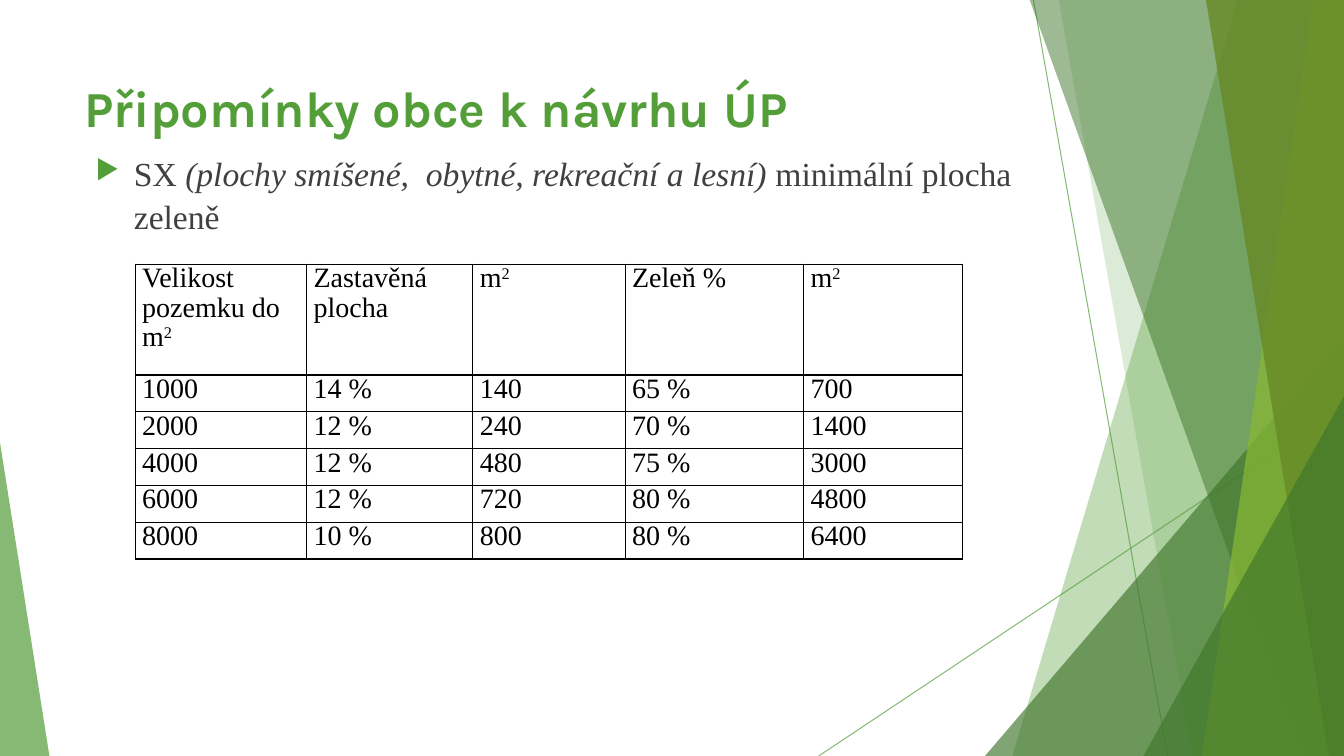
from dataclasses import dataclass

from lxml.etree import SubElement
from pptx import Presentation
from pptx.dml.color import RGBColor
from pptx.enum.shapes import MSO_CONNECTOR, MSO_SHAPE
from pptx.enum.text import MSO_ANCHOR
from pptx.oxml import parse_xml
from pptx.oxml.ns import nsdecls, qn
from pptx.util import Inches, Pt


@dataclass(frozen=True)
class Theme:
    green: str = "549E39"
    dark: str = "3F762B"
    lime: str = "8AB833"
    olive: str = "678A26"
    body: str = "404040"
    black: str = "000000"
    title_font: str = "Karla"
    text_font: str = "Times New Roman"
    title_size: int = 36
    body_size: int = 24
    table_size: int = 20


T = Theme()
WIDTH, HEIGHT = 13.33, 7.5


def set_alpha(s, percent):
    """Make every solid colour of the shape see-through."""
    for clr in s._element.spPr.iter(qn("a:srgbClr")):
        SubElement(clr, qn("a:alpha")).set("val", str(percent * 1000))


def paint(s, color, alpha):
    s.shadow.inherit = False
    s.fill.solid()
    s.fill.fore_color.rgb = RGBColor.from_string(color)
    s.line.fill.background()
    set_alpha(s, alpha)


def add_run(p, text, font, size, color, bold=False, italic=False, raised=False):
    r = p.add_run()
    r.text = text
    f = r.font
    f.name, f.size, f.bold, f.italic = font, Pt(size), bold, italic
    f.color.rgb = RGBColor.from_string(color)
    if raised:
        f._element.set("baseline", "30000")


def add_ray(slide, start, end):
    s = slide.shapes.add_connector(
        MSO_CONNECTOR.STRAIGHT, *(Inches(v) for v in (*start, *end)))
    s.line.width = Pt(0.75)
    s.line.color.rgb = RGBColor.from_string(T.green)
    SubElement(s._element.spPr, qn("a:effectLst"))
    set_alpha(s, 70)


def add_blade(slide, top_x, bottom_x, color, alpha):
    """Fill from a slanted left edge to the right side of the slide."""
    top = -0.01
    corners = [(top_x, top), (WIDTH, top), (WIDTH, HEIGHT), (bottom_x, HEIGHT)]
    points = [(Inches(x), Inches(y)) for x, y in corners]
    builder = slide.shapes.build_freeform(*points[0])
    builder.add_line_segments(points[1:], close=True)
    paint(builder.convert_to_shape(), color, alpha)


def add_wedge(slide, left, top, width, peak, color, alpha):
    """Triangle standing on the bottom edge, with its peak at 0 or 1."""
    s = slide.shapes.add_shape(
        MSO_SHAPE.ISOSCELES_TRIANGLE,
        *(Inches(v) for v in (left, top, width, HEIGHT - top)))
    s.adjustments[0] = peak
    paint(s, color, alpha)


def add_facets(slide):
    # Thin rays
    add_ray(slide, (10.25, 0), (11.58, HEIGHT))
    add_ray(slide, (WIDTH, 4.03), (8.12, HEIGHT))
    # Right-hand blades and wedges, back to front
    add_blade(slide, 12.28, 10.04, T.green, 36)
    add_blade(slide, 10.5, 11.83, T.green, 20)
    add_wedge(slide, 9.77, 3.33, 3.56, 1, T.dark, 66)
    add_blade(slide, 10.21, 12.91, T.dark, 50)
    add_blade(slide, 13.03, 11.92, T.lime, 70)
    add_blade(slide, 11.96, 13.18, T.olive, 80)
    add_wedge(slide, 11.34, 3.93, 1.99, 1, T.dark, 66)
    # Left corner
    add_wedge(slide, 0, 4.39, 0.49, 0, T.green, 70)


def add_text_box(slide, box):
    tf = slide.shapes.add_textbox(*(Inches(v) for v in box)).text_frame
    tf.word_wrap = True
    tf.vertical_anchor = MSO_ANCHOR.TOP
    p = tf.paragraphs[0]
    p.line_spacing = 1.07
    return p


def add_title(slide, box):
    p = add_text_box(slide, box)
    add_run(p, "Připomínky obce k návrhu ÚP", T.title_font, T.title_size,
            T.green, bold=True)


def add_body(slide, box):
    p = add_text_box(slide, box)
    p.space_before = Pt(10)
    # Green arrow bullet with a hanging indent
    pPr = p._p.get_or_add_pPr()
    pPr.set("marL", str(Inches(0.38)))
    pPr.set("indent", str(-Inches(0.38)))
    color = SubElement(pPr, qn("a:buClr"))
    SubElement(color, qn("a:srgbClr")).set("val", T.green)
    SubElement(pPr, qn("a:buSzPct")).set("val", "80000")
    SubElement(pPr, qn("a:buChar")).set("char", "▶")
    for text, italic in (("SX ", False),
                         ("(plochy smíšené,  obytné, rekreační a lesní) ", True),
                         ("minimální plocha zeleně", False)):
        add_run(p, text, T.text_font, T.body_size, T.body, italic=italic)


def add_borders(cell):
    tcPr = cell._tc.get_or_add_tcPr()
    for i, side in enumerate(("lnL", "lnR", "lnT", "lnB")):
        tcPr.insert(i, parse_xml(
            f'<a:{side} {nsdecls("a")} w="{Pt(1)}"><a:solidFill>'
            f'<a:srgbClr val="{T.black}"/></a:solidFill></a:{side}>'))


def fill_cell(cell, text):
    cell.fill.background()
    add_borders(cell)
    cell.margin_left = cell.margin_right = Inches(0.07)
    cell.margin_top = cell.margin_bottom = 0
    p = cell.text_frame.paragraphs[0]
    p.line_spacing = 0.95
    # A caret marks the start of a superscript
    base, _, power = text.partition("^")
    add_run(p, base, T.text_font, T.table_size, T.black)
    if power:
        add_run(p, power, T.text_font, T.table_size, T.black, raised=True)


def add_plot_table(slide, left, top):
    rows = [
        ("Velikost pozemku do m^2", "Zastavěná plocha", "m^2", "Zeleň %", "m^2"),
        ("1000", "14 %", "140", "65 %", "700"),
        ("2000", "12 %", "240", "70 %", "1400"),
        ("4000", "12 %", "480", "75 %", "3000"),
        ("6000", "12 %", "720", "80 %", "4800"),
        ("8000", "10 %", "800", "80 %", "6400"),
    ]
    widths = [1.7, 1.65, 1.51, 1.77, 1.58]
    heights = [1.1] + [0.365] * (len(rows) - 1)
    table = slide.shapes.add_table(
        len(rows), len(widths), Inches(left), Inches(top),
        Inches(sum(widths)), Inches(sum(heights))).table
    table.first_row = table.horz_banding = False
    for column, width in zip(table.columns, widths):
        column.width = Inches(width)
    for i, (values, height) in enumerate(zip(rows, heights)):
        table.rows[i].height = Inches(height)
        for j, text in enumerate(values):
            fill_cell(table.cell(i, j), text)


def main():
    prs = Presentation()
    prs.slide_width, prs.slide_height = Inches(WIDTH), Inches(HEIGHT)
    slide = prs.slides.add_slide(prs.slide_layouts[6])
    add_facets(slide)
    add_title(slide, (0.74, 0.67, 9.4, 0.87))
    add_body(slide, (0.85, 1.44, 9.4, 4.24))
    add_plot_table(slide, 1.34, 2.62)
    prs.save("out.pptx")


if __name__ == "__main__":
    main()
